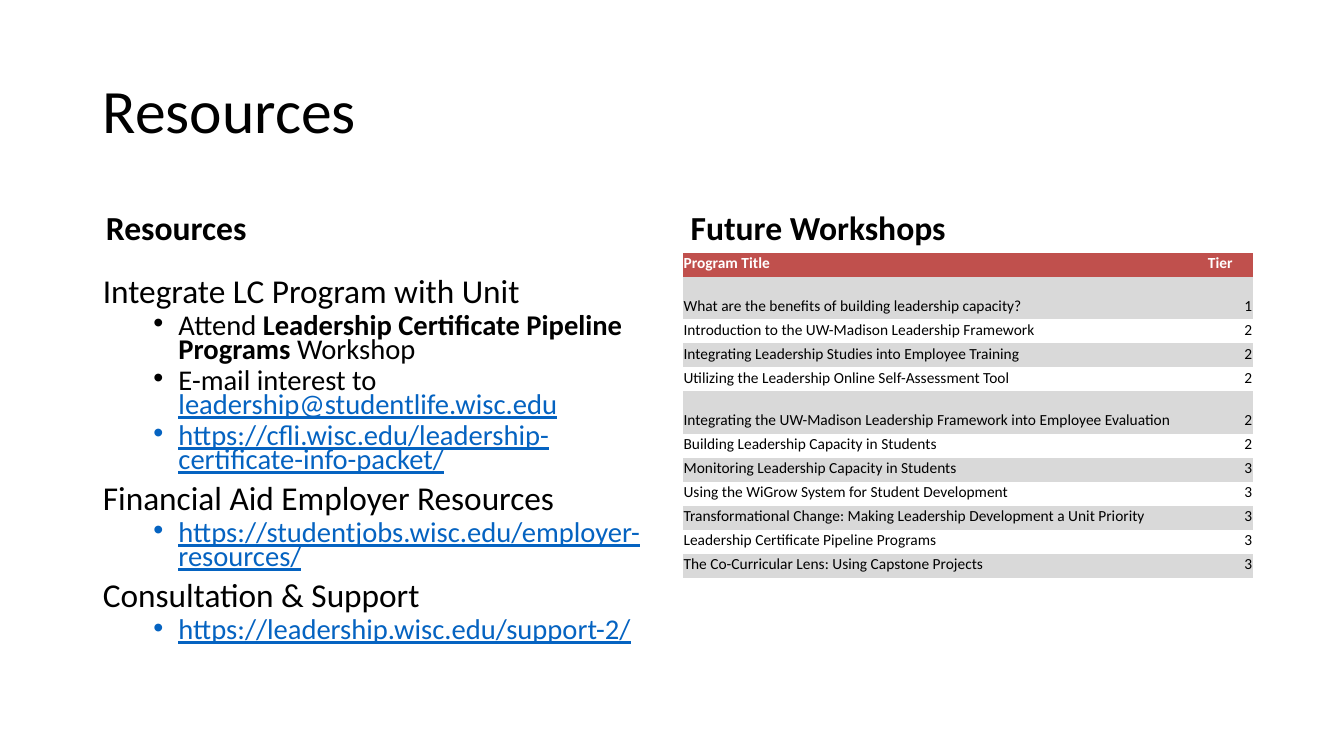
from dataclasses import dataclass

from lxml import etree
from pptx import Presentation
from pptx.dml.color import RGBColor
from pptx.enum.text import MSO_ANCHOR, MSO_AUTO_SIZE, PP_ALIGN
from pptx.oxml.ns import qn
from pptx.util import Inches, Pt

BLACK = RGBColor(0x00, 0x00, 0x00)
WHITE = RGBColor(0xFF, 0xFF, 0xFF)
LINK_BLUE = RGBColor(0x05, 0x63, 0xC1)
HEADER_RED = RGBColor(0xC0, 0x50, 0x4D)
BAND_GRAY = RGBColor(0xD9, 0xD9, 0xD9)

LEFT, RIGHT = PP_ALIGN.LEFT, PP_ALIGN.RIGHT
TOP, MIDDLE, BOTTOM = MSO_ANCHOR.TOP, MSO_ANCHOR.MIDDLE, MSO_ANCHOR.BOTTOM
NO_AUTOFIT = MSO_AUTO_SIZE.NONE

COMPARISON_LAYOUT = 4
FONT = "Calibri"
PLAIN_TABLE_STYLE = "{2D5ABB26-0587-4C30-8999-92F81FD0307C}"
ROW_HEIGHT, TALL_ROW_HEIGHT = 0.23, 0.42


@dataclass
class Phrase:
    text: str
    bold: bool = False
    link: bool = False


@dataclass
class Entry:
    phrases: list[Phrase]
    bulleted: bool = True


@dataclass
class Heading:
    placeholder: int
    text: str
    box: tuple[float, float, float, float]
    size: float
    bold: bool
    anchor: MSO_ANCHOR


@dataclass
class Workshop:
    title: str
    tier: str
    tall: bool = False


HEADINGS = [
    Heading(0, "Resources", (0.92, 0.4, 11.5, 1.45), 44, False, MIDDLE),
    Heading(1, "Resources", (0.95, 1.61, 5.64, 0.9), 24, True, BOTTOM),
    Heading(3, "Future Workshops", (6.75, 1.61, 5.67, 0.9), 24, True, BOTTOM),
]

RESOURCES = [
    Entry([Phrase("Integrate LC Program with Unit")], bulleted=False),
    Entry([
        Phrase("Attend "),
        Phrase("Leadership Certificate Pipeline Programs ", bold=True),
        Phrase("Workshop"),
    ]),
    Entry([Phrase("E-mail interest to "), Phrase("leadership@studentlife.wisc.edu", link=True)]),
    Entry([Phrase("https://cfli.wisc.edu/leadership-certificate-info-packet/", link=True)]),
    Entry([Phrase("Financial Aid Employer Resources")], bulleted=False),
    Entry([Phrase("https://studentjobs.wisc.edu/employer-resources/", link=True)]),
    Entry([Phrase("Consultation & Support")], bulleted=False),
    Entry([Phrase("https://leadership.wisc.edu/support-2/", link=True)]),
]

WORKSHOPS = [
    Workshop("Program Title", "Tier"),
    Workshop("What are the benefits of building leadership capacity?", "1", tall=True),
    Workshop("Introduction to the UW-Madison Leadership Framework", "2"),
    Workshop("Integrating Leadership Studies into Employee Training", "2"),
    Workshop("Utilizing the Leadership Online Self-Assessment Tool", "2"),
    Workshop("Integrating the UW-Madison Leadership Framework into Employee Evaluation", "2", tall=True),
    Workshop("Building Leadership Capacity in Students", "2"),
    Workshop("Monitoring Leadership Capacity in Students", "3"),
    Workshop("Using the WiGrow System for Student Development", "3"),
    Workshop("Transformational Change: Making Leadership Development a Unit Priority", "3"),
    Workshop("Leadership Certificate Pipeline Programs", "3"),
    Workshop("The Co-Curricular Lens: Using Capstone Projects", "3"),
]


def set_format(target, values: dict) -> None:
    for name, value in values.items():
        setattr(target, name, value)


def add_text(paragraph, text: str, size: float, color: RGBColor,
             bold: bool = False, underline: bool = False) -> None:
    run = paragraph.add_run()
    run.text = text
    set_format(run.font, {"name": FONT, "size": Pt(size), "bold": bold, "underline": underline})
    run.font.color.rgb = color


def place(placeholder, box: tuple[float, float, float, float], anchor: MSO_ANCHOR) -> None:
    left, top, width, height = map(Inches, box)
    set_format(placeholder, {"left": left, "top": top, "width": width, "height": height})
    set_format(placeholder.text_frame, {
        "word_wrap": True, "auto_size": NO_AUTOFIT, "vertical_anchor": anchor})


def set_bullet(paragraph, bulleted: bool) -> None:
    properties = paragraph._p.get_or_add_pPr()
    properties.set("marL", str(Inches(0.75 if bulleted else 0)))
    properties.set("indent", str(Inches(-0.25 if bulleted else 0)))
    if bulleted:
        etree.SubElement(properties, qn("a:buFont"), typeface="Arial")
        etree.SubElement(properties, qn("a:buChar"), char="•")
    else:
        etree.SubElement(properties, qn("a:buNone"))


def add_heading(slide, heading: Heading) -> None:
    placeholder = slide.placeholders[heading.placeholder]
    place(placeholder, heading.box, heading.anchor)
    paragraph = placeholder.text_frame.paragraphs[0]
    set_bullet(paragraph, False)
    set_format(paragraph, {"alignment": LEFT, "line_spacing": 0.9, "space_before": Pt(0)})
    add_text(paragraph, heading.text, heading.size, BLACK, heading.bold)


def add_resources(slide) -> None:
    placeholder = slide.placeholders[2]
    place(placeholder, (0.92, 2.74, 5.64, 4.03), TOP)
    frame = placeholder.text_frame
    for index, entry in enumerate(RESOURCES):
        paragraph = frame.add_paragraph() if index else frame.paragraphs[0]
        set_bullet(paragraph, entry.bulleted)
        gap = 0 if index == 0 else 5 if entry.bulleted else 10
        set_format(paragraph, {
            "level": int(entry.bulleted), "line_spacing": 0.7, "space_before": Pt(gap)})
        for phrase in entry.phrases:
            add_text(paragraph, phrase.text, 20.4 if entry.bulleted else 23.8,
                     LINK_BLUE if phrase.link else BLACK, phrase.bold, phrase.link)


def fill_cell(cell, text: str, row: int, alignment: PP_ALIGN) -> None:
    set_format(cell, {
        "vertical_anchor": BOTTOM, "margin_left": Inches(0.01), "margin_top": Inches(0.01),
        "margin_right": Inches(0.01), "margin_bottom": Inches(0.04)})
    if row == 0 or row % 2:
        cell.fill.solid()
        cell.fill.fore_color.rgb = BAND_GRAY if row else HEADER_RED
    else:
        cell.fill.background()
    paragraph = cell.text_frame.paragraphs[0]
    paragraph.alignment = alignment
    add_text(paragraph, text, 11, BLACK if row else WHITE, bold=row == 0)


def add_workshops(slide) -> None:
    frame = slide.shapes.add_table(len(WORKSHOPS), 2, Inches(6.77), Inches(2.51),
                                   Inches(5.66), Inches(3.14))
    table = frame.table
    set_format(table, {"first_row": False, "horz_banding": False})
    next(frame.element.iter(qn("a:tableStyleId"))).text = PLAIN_TABLE_STYLE
    for column, width in zip(table.columns, (5.2, 0.46)):
        column.width = Inches(width)
    for row, workshop in enumerate(WORKSHOPS):
        table.rows[row].height = Inches(TALL_ROW_HEIGHT if workshop.tall else ROW_HEIGHT)
        fill_cell(table.cell(row, 0), workshop.title, row, LEFT)
        fill_cell(table.cell(row, 1), workshop.tier, row, RIGHT if row else LEFT)


def main() -> None:
    presentation = Presentation()
    set_format(presentation, {"slide_width": Inches(13.33), "slide_height": Inches(7.5)})
    slide = presentation.slides.add_slide(presentation.slide_layouts[COMPARISON_LAYOUT])
    for heading in HEADINGS:
        add_heading(slide, heading)
    add_resources(slide)
    unused = slide.placeholders[4].element
    unused.getparent().remove(unused)
    add_workshops(slide)
    presentation.save("out.pptx")


if __name__ == "__main__":
    main()
